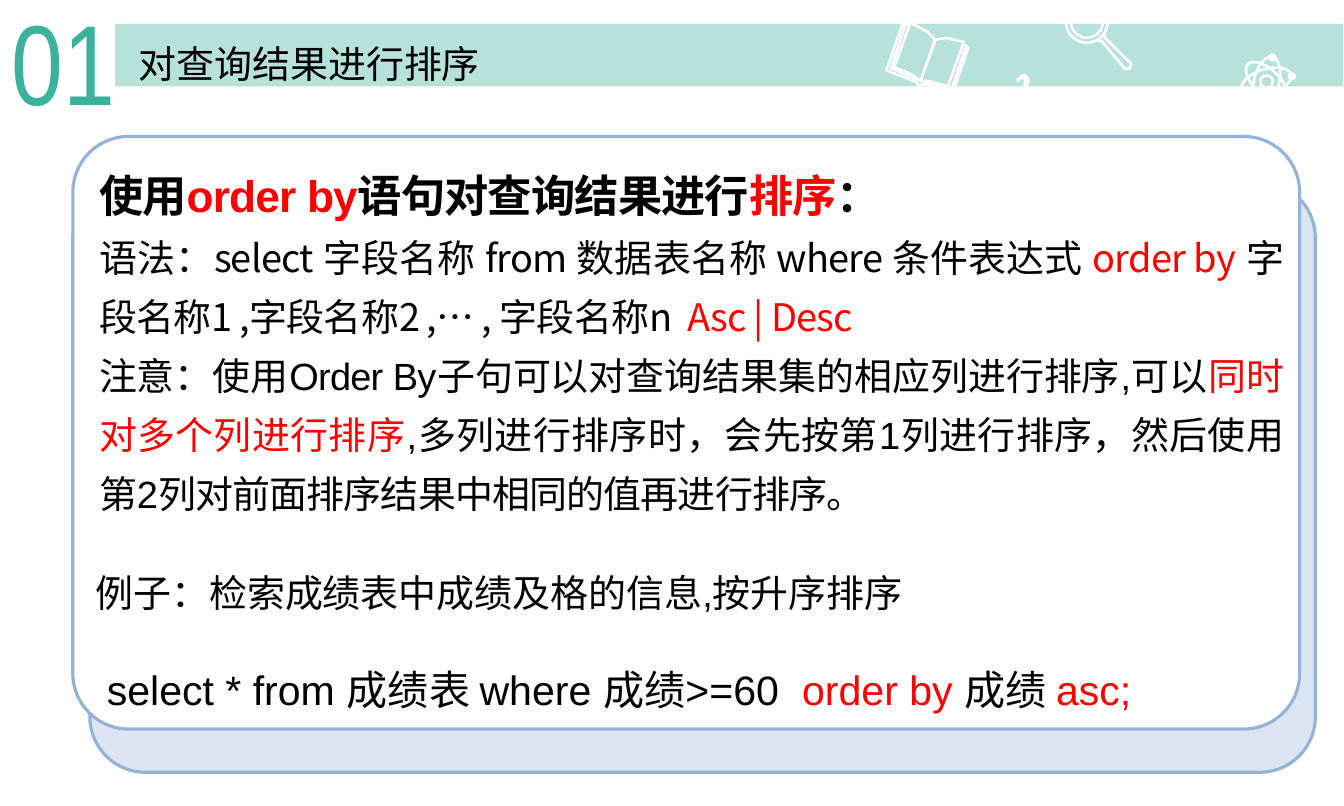
from lxml import etree
from pptx import Presentation
from pptx.dml.color import RGBColor
from pptx.enum import shapes, text
from pptx.oxml import ns
from pptx.util import Pt

GREEN, WHITE, BLACK, RED = "3CB19B", "FFFFFF", "000000", "FF0000"
PALE_BLUE, BLUE = "DCE6F2", "95B3D7"
SANS, CJK, NARROW = "Arial", "Noto Sans CJK SC", "Arial Narrow"

deck = Presentation()
deck.slide_width, deck.slide_height = Pt(850.39), Pt(510.24)
page = deck.slides.add_slide(deck.slide_layouts[6])


def paint(shape, fill=None, line=None, width=1.63):
    """Give a shape its fill and outline, or none, and no shadow."""
    shape.shadow.inherit = False
    if fill:
        shape.fill.solid()
        shape.fill.fore_color.rgb = RGBColor.from_string(fill)
    else:
        shape.fill.background()
    if line:
        shape.line.color.rgb = RGBColor.from_string(line)
        shape.line.width = Pt(width)
    else:
        shape.line.fill.background()
    return shape


def write(bounds, paragraphs, wrap=True, spacing=None, tracking=None):
    """Add a text box; each paragraph is size, font, bold and (words, colour) spans."""
    box = page.shapes.add_textbox(*map(Pt, bounds))
    frame = box.text_frame
    frame.word_wrap = wrap
    frame.auto_size = text.MSO_AUTO_SIZE.SHAPE_TO_FIT_TEXT
    for index, (size, font, bold, spans) in enumerate(paragraphs):
        para = frame.add_paragraph() if index else frame.paragraphs[0]
        if spacing:
            para.line_spacing = spacing
            para.alignment = text.PP_ALIGN.JUSTIFY
        for words, colour in spans:
            span = para.add_run()
            span.text = words
            span.font.size, span.font.bold = Pt(size), bold
            span.font.color.rgb = RGBColor.from_string(colour)
            span.font.name = font
            properties = span.font._element
            etree.SubElement(properties, ns.qn("a:ea"), typeface=CJK)
            if tracking:
                properties.set("spc", str(tracking))
    return frame


# Header
write((0, -8.6, 80.6, 94.3), [(72, NARROW, False, [("01", GREEN)])], wrap=False)
band = page.shapes.add_shape(shapes.MSO_SHAPE.RECTANGLE, Pt(72.8), Pt(15.1), Pt(776.9), Pt(39.6))
paint(band, GREEN)
band_colour = band._element.spPr.find(ns.qn("a:solidFill"))[0]
etree.SubElement(band_colour, ns.qn("a:alpha"), val="37000")
write((80.6, 21.9, 230.4, 36), [(24, CJK, False, [("对查询结果进行排序", BLACK)])], wrap=False)

# Header icons: points, closed, fill, line
book_cover = [(573.1, 15.8), (571, 15.1), (560.9, 44.6), (579.6, 51.8), (581, 54),
              (584.6, 53.3), (602.6, 59.8), (612.7, 30.2), (611.3, 29.5)]
book_edge = [(575.3, 15.8), (573.1, 15.1), (563.8, 43.2), (582.5, 51.1),
             (601.9, 56.9), (611.3, 28.8), (609.1, 28.1)]
left_leaf = [(582.5, 51.1), (576.5, 46.9), (565.9, 42.5), (576, 14.4),
             (586.8, 20.2), (591.8, 25.2)]
right_leaf = [(582.5, 51.1), (589, 51.6), (599.8, 54.7), (609.8, 26.6),
              (599, 24.1), (591.8, 25.2)]
lens_handle = [(694.1, 25.9), (697, 25.9), (712.1, 43.9), (715, 43.2),
               (715.7, 40.3), (699.1, 23.8), (699.1, 20.9)]
question_mark = [(650.9, 55.4), (648, 56.9), (647.3, 54.7), (648, 51.1), (647.3, 49.7),
                 (645.1, 51.1), (643.7, 52.6), (643, 50.4), (645.8, 47.5), (648.7, 46.8),
                 (650.9, 49), (651.6, 51.1), (650.2, 54.7)]
for points, closed, fill, line in [
    (book_cover, False, None, WHITE),
    (book_edge, False, None, WHITE),
    (left_leaf, True, None, WHITE),
    (right_leaf, True, None, WHITE),
    (lens_handle, False, None, WHITE),
    (question_mark, True, WHITE, None),
]:
    corners = [(Pt(x), Pt(y)) for x, y in points]
    builder = page.shapes.build_freeform(*corners[0], scale=1)
    builder.add_line_segments(corners[1:], close=closed)
    paint(builder.convert_to_shape(), fill, line)

# Round icon parts: centre, width, height, rotation, fill, line
lens = [(687.7, 13.8, size, size, 0, None, WHITE) for size in (26.6, 20.2)]
orbits = [(801.4, 51.8, 16, 32.5, angle, None, WHITE) for angle in (13, 73, 133)]
nucleus = [(801.4, 51.8, 8, 8, 0, None, WHITE)]
electrons = [(x, y, 5.2, 5.2, 0, WHITE, None)
             for x, y in [(817.4, 48.4), (786.1, 57.8), (805, 36.4)]]
for x, y, width, height, angle, fill, line in lens + orbits + nucleus + electrons:
    oval = page.shapes.add_shape(shapes.MSO_SHAPE.OVAL, Pt(x - width / 2),
                                 Pt(y - height / 2), Pt(width), Pt(height))
    oval.rotation = angle
    paint(oval, fill, line)

# Stacked cards
for left, top, width, height, fill in [(56.9, 115.2, 775.4, 373.7, PALE_BLUE),
                                       (46.1, 86.4, 776.2, 375.1, WHITE)]:
    card = page.shapes.add_shape(shapes.MSO_SHAPE.ROUNDED_RECTANGLE,
                                 Pt(left), Pt(top), Pt(width), Pt(height))
    card.adjustments[0] = 0.094
    paint(card, fill, BLUE, 2)

# Explanation and example
explanation = write((56.9, 93.3, 761, 276.5), [
    (28, SANS, True, [("使用", BLACK), ("order by", RED), ("语句对查询结果进行", BLACK),
                      ("排序", RED), ("：", BLACK)]),
    (24, CJK, False, [("语法：select 字段名称 from 数据表名称 where 条件表达式 ", BLACK),
                      ("order by", RED),
                      (" 字段名称1 ,字段名称2 ,… , 字段名称n  ", BLACK),
                      ("Asc | Desc", RED)]),
    (24, SANS, False, [("注意：使用Order By子句可以对查询结果集的相应列进行排序,可以", BLACK),
                       ("同时对多个列进行排序", RED),
                       (",多列进行排序时，会先按第1列进行排序，然后使用第2列对前面排序结果中"
                        "相同的值再进行排序。", BLACK)]),
], spacing=1.3, tracking=-50)
explanation.margin_left = explanation.margin_right = Pt(5.8)
explanation.margin_top = explanation.margin_bottom = Pt(2.9)

write((53.3, 348.2, 743.8, 45.4), [
    (24, SANS, False, [("例子：检索成绩表中成绩及格的信息,按升序排序", BLACK)]),
], spacing=1.3)
write((60.5, 407.5, 743.8, 42.5), [
    (26, SANS, False, [("select * from 成绩表 where 成绩>=60  ", BLACK), ("order by ", RED),
                       ("成绩 ", BLACK), ("asc;", RED)]),
], spacing=1.3)

deck.save("out.pptx")
